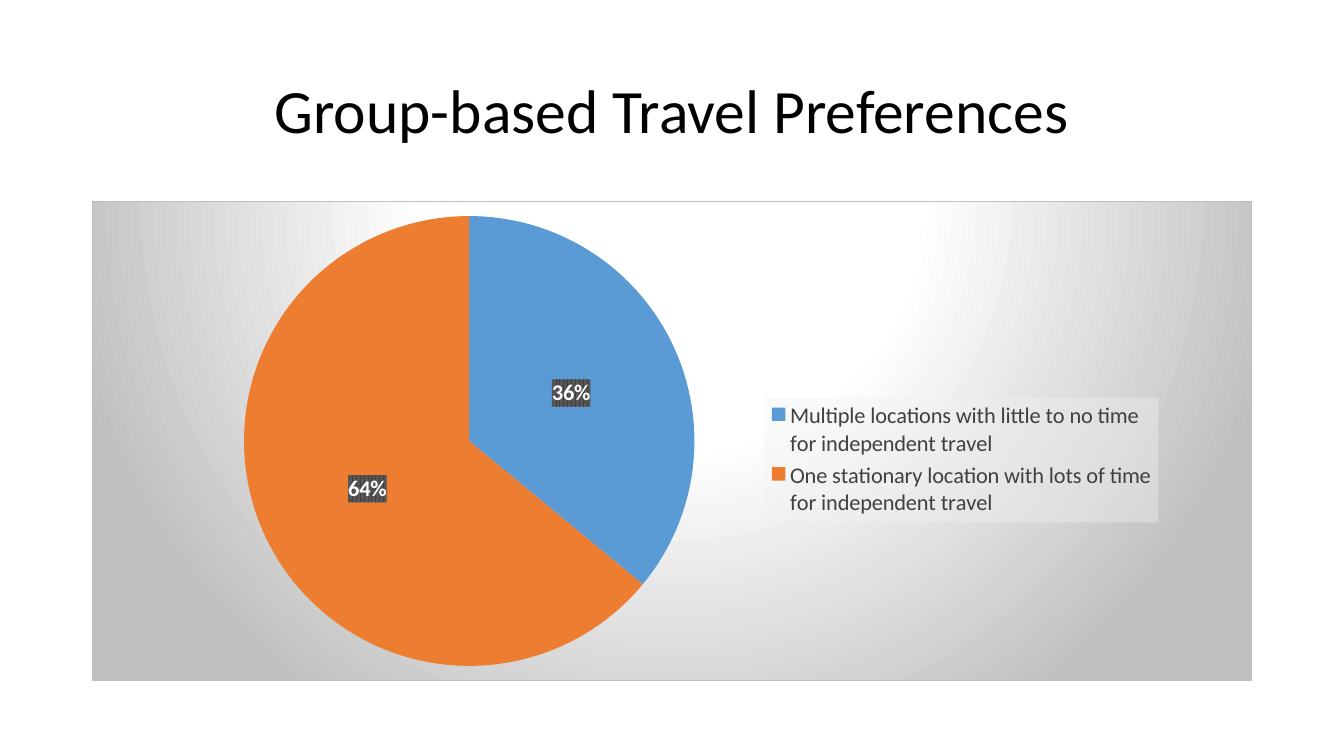
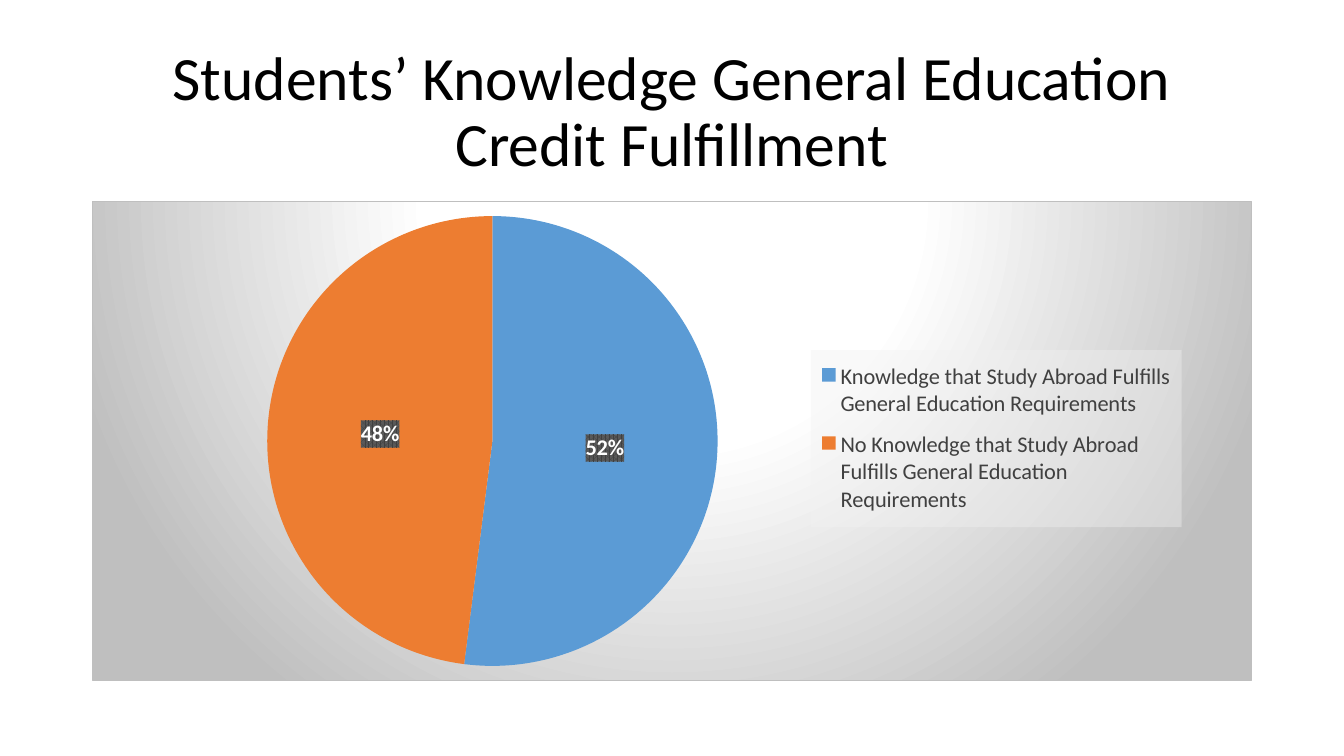
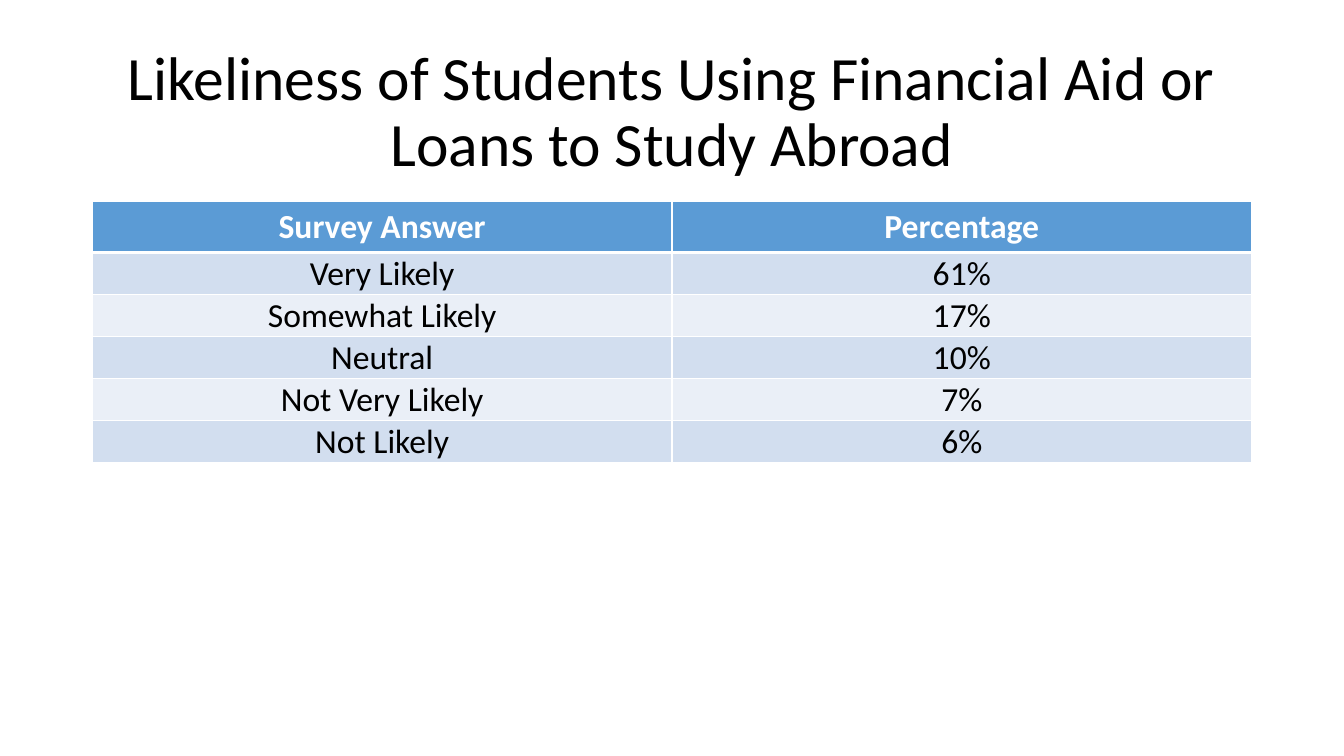
from pptx import Presentation
from pptx.chart.data import CategoryChartData
from pptx.dml.color import RGBColor
from pptx.enum import chart as ch, text
from pptx.oxml import ns, parse_xml
from pptx.util import Pt

LEFT, WIDTH = 66, 828
BODY_TOP = 143.75


def rgb(hex_string):
    return RGBColor.from_string(hex_string)


def xml(body):
    """Build one element, declaring the chart and drawing namespaces on it."""
    tag, rest = body.split(">", 1)
    return parse_xml(f'{tag} {ns.nsdecls("c", "a")}>{rest}')


def solid(color, alpha=100):
    return (f'<a:solidFill><a:srgbClr val="{color}"><a:alpha val="{alpha * 1000}"/>'
            f'</a:srgbClr></a:solidFill>')


def layout(x, y, w, h, inner=False):
    """Manual chart layout, in fractions of the chart area."""
    target = '<c:layoutTarget val="inner"/>' if inner else ""
    places = "".join(f'<c:{k} val="{v}"/>' for k, v in zip("xywh", (x, y, w, h)))
    return xml(f'<c:layout><c:manualLayout>{target}<c:xMode val="edge"/>'
               f'<c:yMode val="edge"/>{places}</c:manualLayout></c:layout>')


class Deck:
    font = "Calibri"
    black, white, grey, silver = "000000", "FFFFFF", "404040", "BFBFBF"
    blue, orange = "5B9BD5", "ED7D31"
    bands = "D2DEEF", "EAEFF7"

    def __init__(self):
        self.prs = Presentation()
        self.prs.slide_width, self.prs.slide_height = Pt(960), Pt(540)

    def style(self, font, size, color, bold=False):
        font.name, font.size, font.bold = self.font, Pt(size), bold
        font.color.rgb = rgb(color)

    def centred_text(self, tf, words, size, color, bold=False):
        tf.text = words
        p = tf.paragraphs[0]
        p.alignment = text.PP_ALIGN.CENTER
        self.style(p.runs[0].font, size, color, bold)
        return p

    def slide(self, title):
        self.s = self.prs.slides.add_slide(self.prs.slide_layouts[5])
        sp = self.s.shapes.title
        sp.left, sp.top, sp.width, sp.height = Pt(LEFT), Pt(28.75), Pt(WIDTH), Pt(104.4)
        sp.text_frame.vertical_anchor = text.MSO_ANCHOR.MIDDLE
        self.centred_text(sp.text_frame, title, 44, self.black).line_spacing = 0.9

    def pie(self, shares, pie_left, legend_box):
        data = CategoryChartData()
        data.categories = list(shares)
        data.add_series("Series 1", list(shares.values()))
        chart = self.s.shapes.add_chart(
            ch.XL_CHART_TYPE.PIE, Pt(LEFT), Pt(BODY_TOP), Pt(WIDTH), Pt(342.6), data).chart
        self.style(chart.font, 16, self.black)
        chart.has_title = False
        plot = chart.plots[0]
        plot.vary_by_categories = True
        for i, color in enumerate((self.blue, self.orange)):
            fill = plot.series[0].points[i].format.fill
            fill.solid()
            fill.fore_color.rgb = rgb(color)
        self.pie_labels(plot)
        chart.has_legend = True
        legend = chart.legend
        legend.position = ch.XL_LEGEND_POSITION.RIGHT
        legend.include_in_layout = False
        self.style(legend.font, 16, self.grey)
        self.pie_backgrounds(chart.element, pie_left, legend_box)

    def pie_labels(self, plot):
        plot.has_data_labels = True
        labels = plot.data_labels
        labels.show_percentage, labels.show_value = True, False
        labels.number_format, labels.number_format_is_linked = "0%", False
        labels.position = ch.XL_LABEL_POSITION.CENTER
        self.style(labels.font, 16, self.white, True)

    def pie_backgrounds(self, space, pie_left, legend_box):
        """Place pie and legend, and fill the areas behind chart, legend and labels."""
        plot_area, legend = (space.xpath(f".//c:{n}")[0] for n in ("plotArea", "legend"))
        for parent in (plot_area, legend):
            for old in parent.findall(ns.qn("c:layout")):
                parent.remove(old)
        plot_area.insert(0, layout(pie_left, 0.03, 0.39, 0.94, inner=True))
        legend.find(ns.qn("c:legendPos")).addnext(layout(*legend_box))

        stops = "".join(f'<a:gs pos="{pos * 1000}"><a:srgbClr val="{color}"/></a:gs>'
                        for pos, color in ((0, self.white), (39, self.white), (100, self.silver)))
        glow = (f'<a:gradFill><a:gsLst>{stops}</a:gsLst><a:path path="circle">'
                '<a:fillToRect l="50000" t="-80000" r="50000" b="180000"/></a:path></a:gradFill>'
                f'<a:ln w="{Pt(0.75)}">{solid(self.silver)}</a:ln>')
        pattern = (f'<a:pattFill prst="pct75"><a:fgClr><a:srgbClr val="{self.grey}"/></a:fgClr>'
                   '<a:bgClr><a:srgbClr val="595959"/></a:bgClr></a:pattFill>')
        labels = space.xpath(".//c:dLbls")[0]
        for parent, fill in ((space, glow), (legend, solid("F2F2F2", 39)), (labels, pattern)):
            parent.find(ns.qn("c:txPr")).addprevious(xml(f"<c:spPr>{fill}</c:spPr>"))

    def table(self, rows):
        header, row = 36, 30
        grid = self.s.shapes.add_table(
            len(rows), len(rows[0]), Pt(LEFT), Pt(BODY_TOP), Pt(WIDTH),
            Pt(header + row * (len(rows) - 1))).table
        for i, words in enumerate(rows):
            grid.rows[i].height = Pt(row if i else header)
            for j, word in enumerate(words):
                self.cell(grid.cell(i, j), word, i)

    def cell(self, cell, word, row):
        is_header = row == 0
        cell.fill.solid()
        cell.fill.fore_color.rgb = rgb(self.blue if is_header else self.bands[(row - 1) % 2])
        if not is_header:
            cell.vertical_anchor = text.MSO_ANCHOR.BOTTOM
            cell.margin_left = cell.margin_right = cell.margin_top = Pt(0.75)
            cell.margin_bottom = 0
        color = self.white if is_header else self.black
        self.centred_text(cell.text_frame, word, 24, color, is_header)
        tc_pr = cell._tc.get_or_add_tcPr()
        for k, side in enumerate("LRTB"):
            thick = (is_header and side == "B") or (row == 1 and side == "T")
            tc_pr.insert(k, xml(f'<a:ln{side} w="{Pt(3 if thick else 1)}">'
                                f'{solid(self.white)}</a:ln{side}>'))


def main():
    deck = Deck()
    deck.slide("Group-based Travel Preferences")
    deck.pie({"Multiple locations with little to no time for independent travel": 36,
              "One stationary location with lots of time for independent travel": 64},
             0.13, (0.58, 0.41, 0.34, 0.26))

    deck.slide("Students’ Knowledge General Education Credit Fulfillment")
    deck.pie({"Knowledge that Study Abroad Fulfills General Education Requirements": 52,
              "No Knowledge that Study Abroad Fulfills General Education Requirements": 48},
             0.15, (0.62, 0.31, 0.32, 0.37))

    deck.slide("Likeliness of Students Using Financial Aid or Loans to Study Abroad")
    deck.table([("Survey Answer", "Percentage"),
                ("Very Likely", "61%"),
                ("Somewhat Likely", "17%"),
                ("Neutral", "10%"),
                ("Not Very Likely", "7%"),
                ("Not Likely", "6%")])
    deck.prs.save("out.pptx")


if __name__ == "__main__":
    main()
